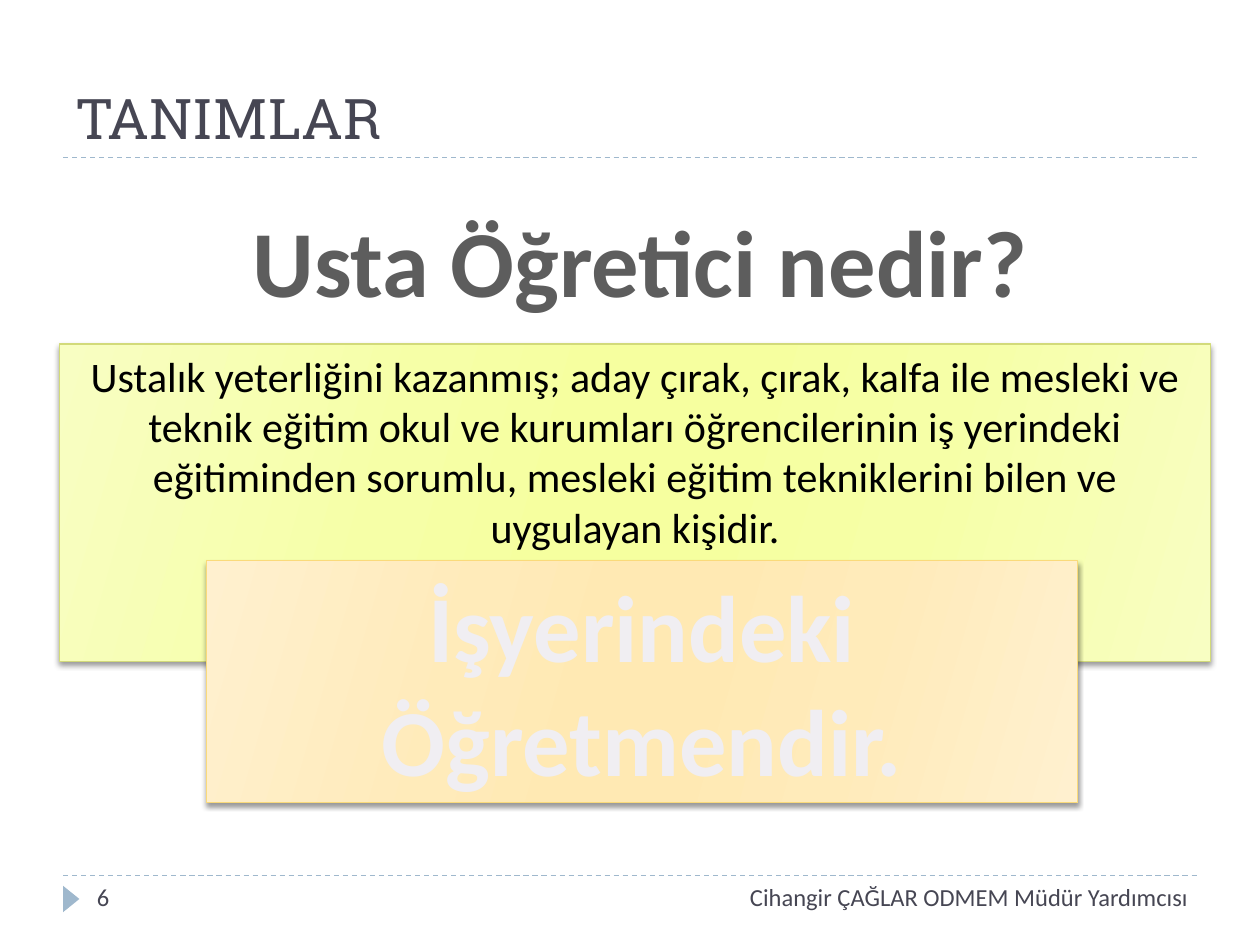
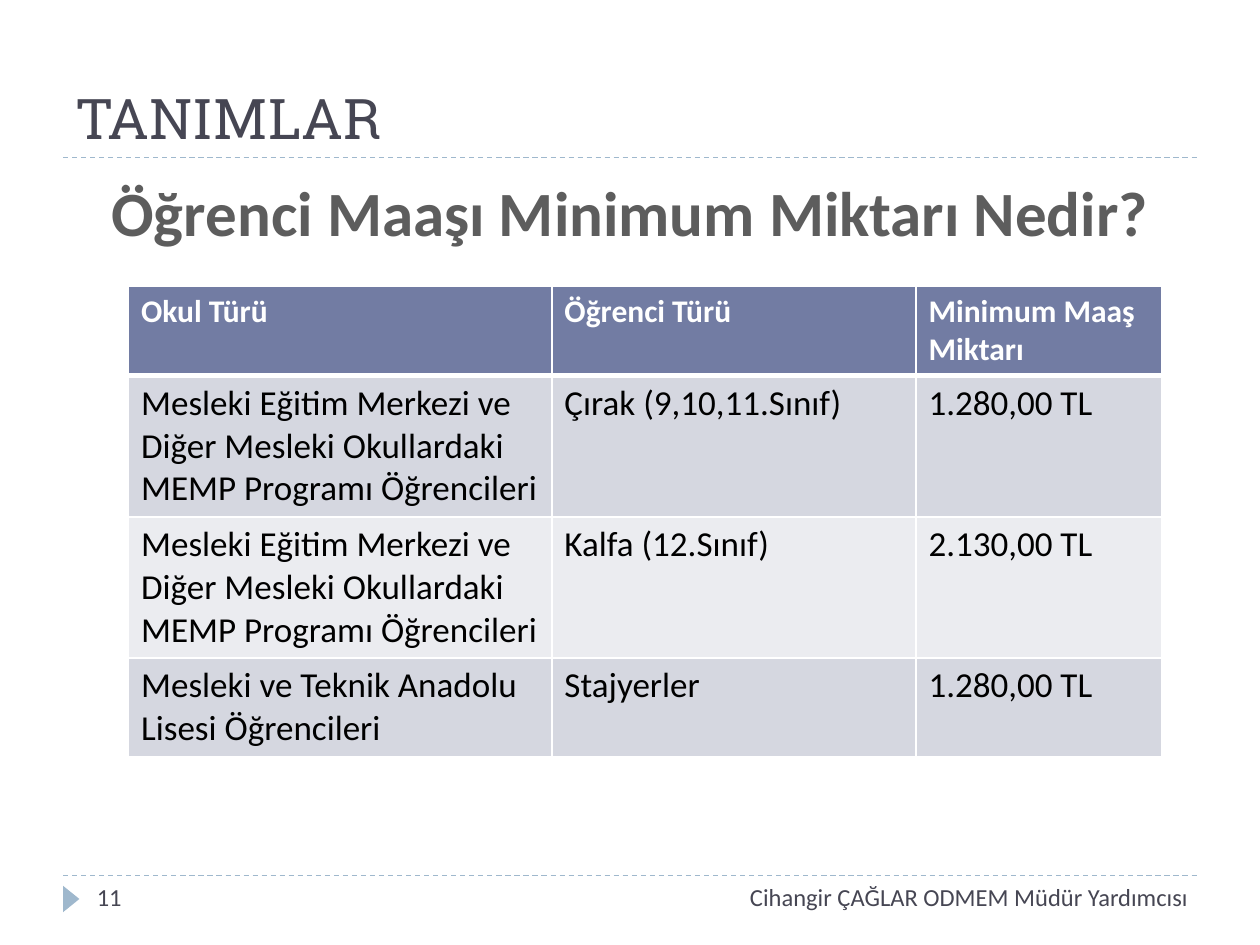
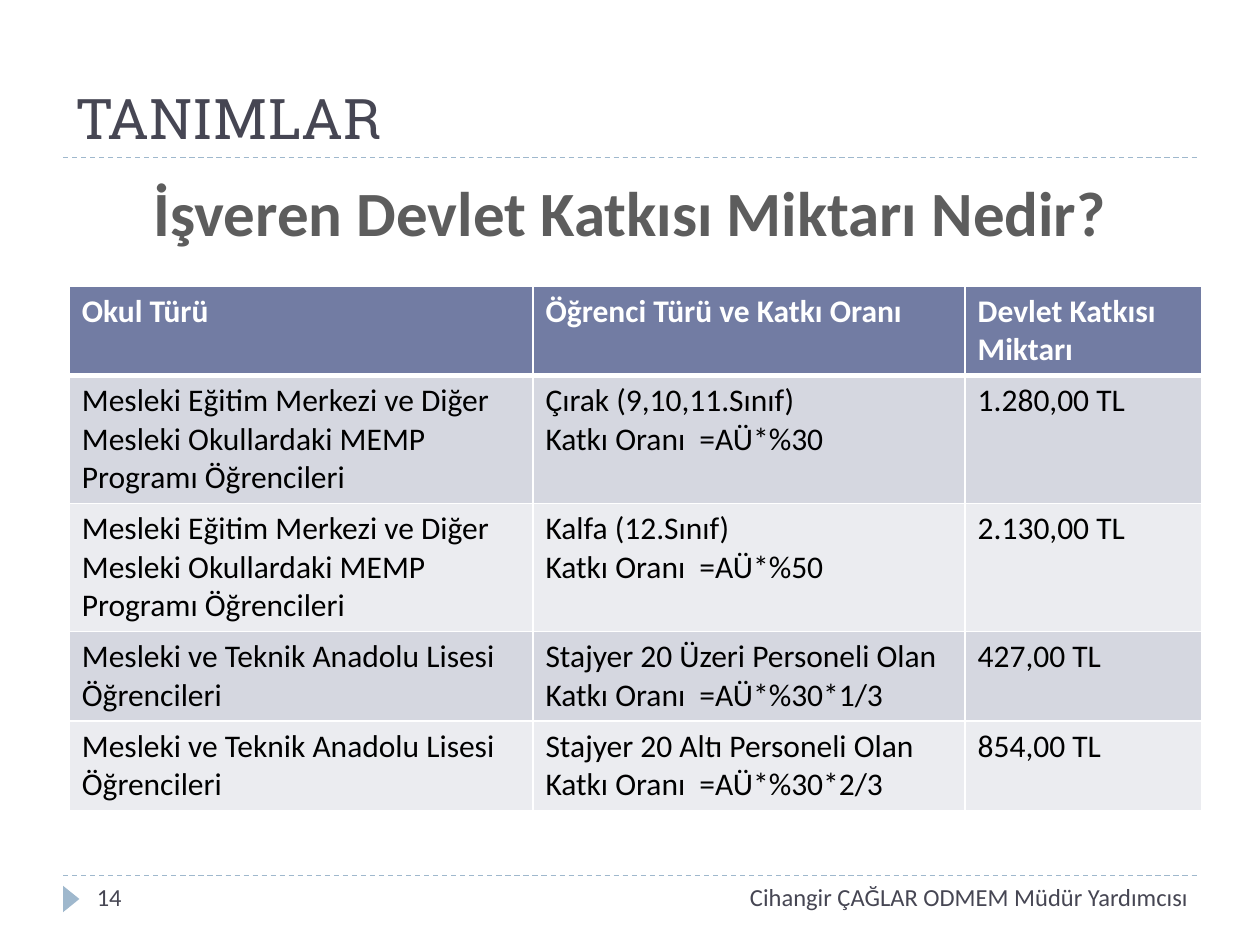
from dataclasses import dataclass

from pptx import Presentation
from pptx.dml.color import RGBColor
from pptx.enum.dml import MSO_LINE
from pptx.enum.shapes import MSO_CONNECTOR, MSO_SHAPE
from pptx.enum.text import MSO_ANCHOR, MSO_AUTO_SIZE, PP_ALIGN
from pptx.oxml import parse_xml
from pptx.oxml.ns import nsdecls, qn
from pptx.util import Emu, Inches, Pt

COLUMNS, ROWS = 20, 15
TITLE_ONLY = 5


@dataclass(frozen=True)
class Theme:
    title_font: str = "Roboto Slab"
    body_font: str = "Calibri"
    title_size: int = 32
    banner_size: int = 54
    heading_size: int = 36
    definition_size: int = 24
    table_size: int = 18
    footer_size: int = 14
    ink: str = "464653"
    text: str = "000000"
    white: str = "FFFFFF"
    pale: str = "F0EEF2"
    rule: str = "9FB8CD"
    header: str = "727CA3"
    bands: tuple = ("D5D7E0", "EBECF0")
    heading_stops: tuple = ((0, "555555"), (49, "5D5D5D"), (50, "000000"), (100, "000000"))
    lime: tuple = ("F8FEC2", "F6FFA7", "F6FF9F")
    lime_edge: str = "D2DA7A"
    amber: tuple = ("FFF0CF", "FFEBBA", "FFE9B3")
    amber_edge: str = "FADA7A"


def assign(target, values):
    for name, value in values.items():
        setattr(target, name, value)


def rgb(code):
    return RGBColor.from_string(code)


def solid(code):
    return f'<a:solidFill><a:srgbClr val="{code}"/></a:solidFill>'


def gradient(stops, angle):
    marks = "".join(f'<a:gs pos="{share * 1000}"><a:srgbClr val="{code}"/></a:gs>'
                    for share, code in stops)
    return parse_xml(f'<a:gradFill {nsdecls("a")} rotWithShape="1"><a:gsLst>{marks}</a:gsLst>'
                     f'<a:lin ang="{angle * 60000}" scaled="1"/></a:gradFill>')


def outline(tag, code, points):
    return parse_xml(f'<a:{tag} {nsdecls("a")} w="{Pt(points)}">{solid(code)}</a:{tag}>')


def sheen(edge, between, middle):
    """Gradient stops that run from the edge tone to the middle tone and back."""
    return tuple(zip((0, 30, 45, 55, 73, 100),
                     (edge, between, middle, middle, between, edge)))


class Deck:
    def __init__(self, theme, footer):
        self.theme, self.footer = theme, footer
        self.presentation = Presentation()
        assign(self.presentation, {"slide_width": Inches(10), "slide_height": Inches(7.5)})
        self.layout = self.presentation.slide_layouts[TITLE_ONLY]
        self.slide = None

    def x(self, columns):
        return Emu(round(self.presentation.slide_width * columns / COLUMNS))

    def y(self, rows):
        return Emu(round(self.presentation.slide_height * rows / ROWS))

    def place(self, left, top, width, height):
        return self.x(left), self.y(top), self.x(width), self.y(height)

    def add_slide(self, title, number):
        first = self.slide is None
        self.slide = self.presentation.slides.add_slide(self.layout)
        if first:
            self.decorate_layout()
        heading = self.slide.shapes.title
        assign(heading, dict(zip(("left", "top", "width", "height"),
                                 self.place(1, 0.34, 18, 2.16))))
        self.set_text(heading.text_frame, title, self.theme.title_size, self.theme.ink,
                      PP_ALIGN.LEFT, MSO_ANCHOR.BOTTOM, font=self.theme.title_font)
        for text, left, width, align in ((str(number), 1.34, 4.34, PP_ALIGN.LEFT),
                                         (self.footer, 11.4, 7.66, PP_ALIGN.RIGHT)):
            self.text_box((left, 13.9, width, 0.8), text, self.theme.footer_size,
                          self.theme.ink, align)

    def decorate_layout(self):
        """Draw the rules and the page marker, then move them to the layout."""
        marker = self.slide.shapes.add_shape(MSO_SHAPE.ISOSCELES_TRIANGLE,
                                             *self.place(0.92, 14.14, 0.42, 0.26))
        marker.rotation = 90
        marker.fill.solid()
        marker.fill.fore_color.rgb = rgb(self.theme.rule)
        marker.line.fill.background()
        marker.shadow.inherit = False
        for part in (self.rule(13.9), self.rule(2.5), marker):
            self.layout.shapes.element.append(part.element)

    def rule(self, row):
        line = self.slide.shapes.add_connector(MSO_CONNECTOR.STRAIGHT, self.x(1), self.y(row),
                                               self.x(19), self.y(row))
        line.line.color.rgb = rgb(self.theme.rule)
        assign(line.line, {"width": Pt(0.75), "dash_style": MSO_LINE.DASH})
        line.element.spPr.append(parse_xml(f'<a:effectLst {nsdecls("a")}/>'))
        return line

    def set_text(self, frame, text, size, color, align=PP_ALIGN.LEFT, anchor=MSO_ANCHOR.TOP,
                 bold=False, font=None, wrap=True):
        assign(frame, {"text": text, "word_wrap": wrap, "vertical_anchor": anchor,
                       "auto_size": MSO_AUTO_SIZE.NONE})
        self.format_paragraphs(frame, size, color, align, bold, font)

    def format_paragraphs(self, frame, size, color, align=PP_ALIGN.LEFT, bold=False, font=None):
        for paragraph in frame.paragraphs:
            paragraph.alignment = align
            for run in paragraph.runs:
                assign(run.font, {"size": Pt(size), "bold": bold,
                                  "name": font or self.theme.body_font})
                run.font.color.rgb = rgb(color)

    def text_box(self, area, text, size, color, align, **options):
        box = self.slide.shapes.add_textbox(*self.place(*area))
        self.set_text(box.text_frame, text, size, color, align, **options)
        return box

    def question(self, area, text, size, wrap=True):
        """Bold heading with a white edge and a grey-to-black gradient."""
        box = self.text_box(area, text, size, self.theme.text, PP_ALIGN.CENTER,
                            bold=True, wrap=wrap)
        properties = box.text_frame.paragraphs[0].runs[0].font._element
        properties.replace(properties.find(qn("a:solidFill")),
                           gradient(self.theme.heading_stops, 90))
        properties.insert(0, outline("ln", self.theme.white, 1.4))

    def panel(self, area, tones, edge, text, size, color, **options):
        panel = self.slide.shapes.add_shape(MSO_SHAPE.RECTANGLE, *self.place(*area))
        panel.line.color.rgb = rgb(edge)
        panel.line.width = Pt(0.75)
        panel.shadow.inherit = False
        properties = panel.element.spPr
        properties.find(qn("a:prstGeom")).addnext(gradient(sheen(*tones), 16))
        properties.find(qn("a:effectLst")).append(parse_xml(
            f'<a:outerShdw {nsdecls("a")} blurRad="{Pt(3)}" dist="{Pt(2)}" dir="5400000" '
            'rotWithShape="0"><a:srgbClr val="000000"><a:alpha val="40000"/></a:srgbClr>'
            '</a:outerShdw>'))
        self.set_text(panel.text_frame, text, size, color, PP_ALIGN.CENTER, **options)

    def table(self, left, top, widths, rows, line_counts, body_size):
        theme = self.theme
        sizes = [theme.table_size] + [body_size] * (len(rows) - 1)
        heights = [Inches(round(lines * size * 1.2 / 72 + 0.1, 2))
                   for lines, size in zip(line_counts, sizes)]
        table = self.slide.shapes.add_table(len(rows), len(widths), self.x(left), self.y(top),
                                            self.x(sum(widths)), sum(heights)).table
        for column, width in zip(table.columns, widths):
            column.width = self.x(width)
        for index, (row, height, texts) in enumerate(zip(table.rows, heights, rows)):
            row.height = height
            is_header = index == 0
            fill = theme.header if is_header else theme.bands[(index - 1) % 2]
            for cell, text in zip(row.cells, texts):
                cell.text = text
                self.format_paragraphs(cell.text_frame, sizes[index],
                                       theme.white if is_header else theme.text,
                                       bold=is_header)
                cell.fill.solid()
                cell.fill.fore_color.rgb = rgb(fill)
                borders = {"lnL": 1, "lnR": 1, "lnT": 3 if index == 1 else 1,
                           "lnB": 3 if is_header else 1}
                for order, (side, points) in enumerate(borders.items()):
                    cell._tc.tcPr.insert(order, outline(side, theme.white, points))


def main():
    theme = Theme()
    deck = Deck(theme, "Cihangir ÇAĞLAR ODMEM Müdür Yardımcısı")
    title = "TANIMLAR"
    memp = "Mesleki Eğitim Merkezi ve Diğer Mesleki Okullardaki MEMP Programı Öğrencileri"
    anadolu = "Mesleki ve Teknik Anadolu Lisesi Öğrencileri"
    apprentice, journeyman = "Çırak (9,10,11.Sınıf)", "Kalfa (12.Sınıf)"
    apprentice_pay, journeyman_pay = "1.280,00 TL", "2.130,00 TL"
    share = "\nKatkı Oranı  =AÜ*%"
    question_area = (0.94, 2.66, 18.12, 1.42)

    deck.add_slide(title, 6)
    deck.panel((0.94, 5.46, 18.28, 5.04), theme.lime, theme.lime_edge,
               "Ustalık yeterliğini kazanmış; aday çırak, çırak, kalfa ile mesleki ve teknik "
               "eğitim okul ve kurumları öğrencilerinin iş yerindeki eğitiminden sorumlu, "
               "mesleki eğitim tekniklerini bilen ve uygulayan kişidir.",
               theme.definition_size, theme.text)
    deck.question((3.74, 3.12, 12.84, 2.02), "Usta Öğretici nedir?", theme.banner_size,
                  wrap=False)
    deck.panel((3.28, 8.9, 13.82, 3.84), theme.amber, theme.amber_edge,
               "İşyerindeki Öğretmendir.", theme.banner_size, theme.pale,
               anchor=MSO_ANCHOR.MIDDLE, bold=True)

    deck.add_slide(title, 11)
    deck.question(question_area, "Öğrenci Maaşı Minimum Miktarı Nedir?", theme.heading_size)
    deck.table(2.04, 4.54, (6.72, 5.78, 3.9), (
        ("Okul Türü", "Öğrenci Türü", "Minimum Maaş Miktarı"),
        (memp, apprentice, apprentice_pay),
        (memp, journeyman, journeyman_pay),
        (anadolu, "Stajyerler", apprentice_pay),
    ), line_counts=(2, 3, 3, 2), body_size=20)

    deck.add_slide(title, 14)
    deck.question(question_area, "İşveren Devlet Katkısı Miktarı Nedir?", theme.heading_size)
    deck.table(1.1, 4.54, (7.36, 6.86, 3.76), (
        ("Okul Türü", "Öğrenci Türü ve Katkı Oranı", "Devlet Katkısı Miktarı"),
        (memp, f"{apprentice}{share}30", apprentice_pay),
        (memp, f"{journeyman}{share}50", journeyman_pay),
        (anadolu, f"Stajyer 20 Üzeri Personeli Olan{share}30*1/3", "427,00 TL"),
        (anadolu, f"Stajyer 20 Altı Personeli Olan{share}30*2/3", "854,00 TL"),
    ), line_counts=(2, 3, 3, 2, 2), body_size=theme.table_size)

    deck.presentation.save("out.pptx")


if __name__ == "__main__":
    main()
